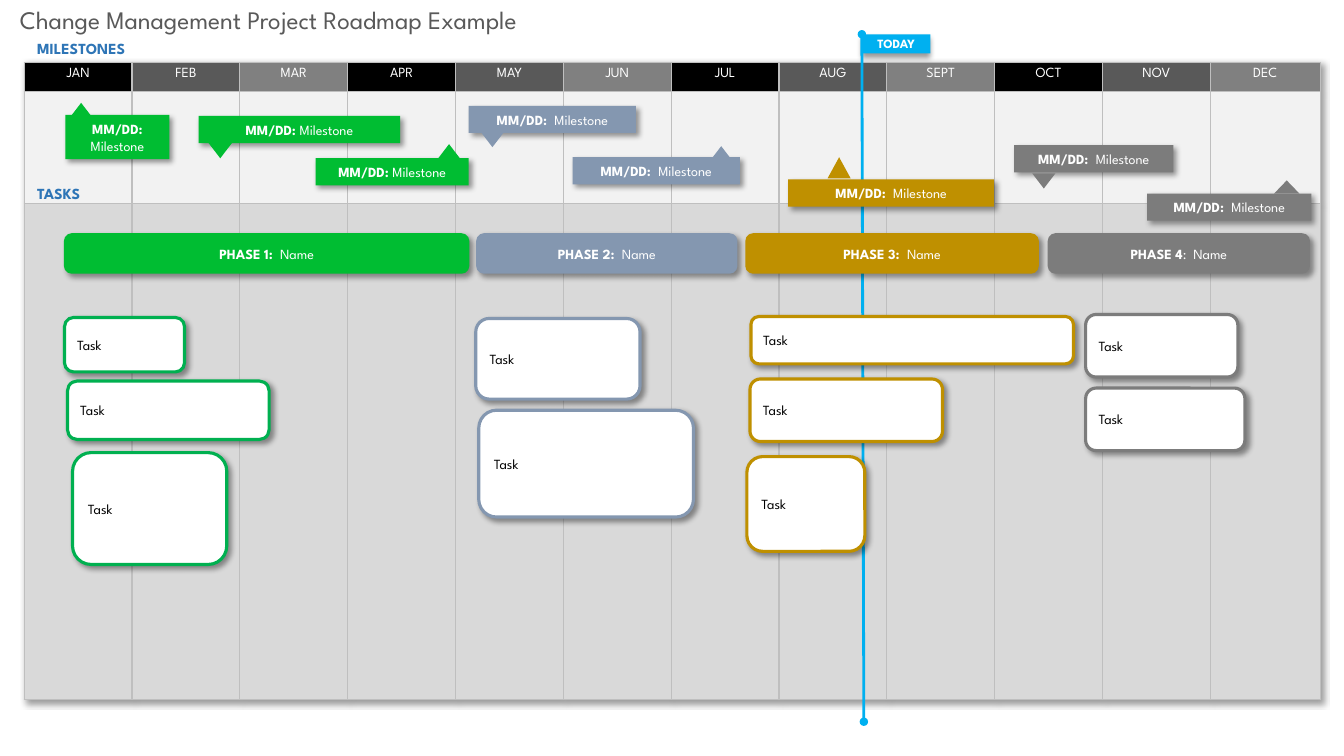
from dataclasses import dataclass
from typing import Any, NamedTuple

from lxml.etree import SubElement
from pptx import Presentation
from pptx.dml.color import RGBColor
from pptx.enum.shapes import MSO_CONNECTOR, MSO_SHAPE
from pptx.enum.text import MSO_ANCHOR, PP_ALIGN
from pptx.oxml.ns import qn
from pptx.util import Inches, Length, Pt

FONT = "League Spartan"
WHITE = RGBColor(0xFF, 0xFF, 0xFF)
BLACK = RGBColor(0x00, 0x00, 0x00)
DARK_GREY = RGBColor(0x59, 0x59, 0x59)
MID_GREY = RGBColor(0x80, 0x80, 0x80)
PALE_GREY = RGBColor(0xF2, 0xF2, 0xF2)
LIGHT_GREY = RGBColor(0xD9, 0xD9, 0xD9)
BORDER_GREY = RGBColor(0xBF, 0xBF, 0xBF)
GREEN = RGBColor(0x00, 0xBD, 0x32)
TASK_GREEN = RGBColor(0x00, 0xB0, 0x50)
SLATE = RGBColor(0x84, 0x97, 0xB0)
GOLD = RGBColor(0xBF, 0x90, 0x00)
GREY = RGBColor(0x7C, 0x7C, 0x7C)
SKY = RGBColor(0x00, 0xB0, 0xF0)
HEADING_BLUE = RGBColor(0x2E, 0x75, 0xB6)

SLIDE_COLUMNS, SLIDE_ROWS = 133.33, 75
GRID_STEP = 0.1
MONTHS = "JAN FEB MAR APR MAY JUN JUL AUG SEPT OCT NOV DEC".split()
MONTH_COLOURS = (BLACK, DARK_GREY, MID_GREY)
MONTH_COLUMNS, LAST_MONTH_COLUMNS = 10.7, 10.9
BAND_ROWS = (2.9, 11.1, 49.2)


class Run(NamedTuple):
    text: str
    bold: bool = False


class Area(NamedTuple):
    column: float
    row: float
    columns: float
    rows: float


Lines = tuple[tuple[Run, ...], ...]


@dataclass(frozen=True)
class Milestone:
    label: Area
    pointer: Area
    colour: RGBColor
    lines: Lines
    points_down: bool = False


@dataclass(frozen=True)
class Phase:
    bar: Area
    colour: RGBColor
    task_colour: RGBColor
    runs: tuple[Run, ...]
    tasks: tuple[Area, ...]


TIGHT = ((Run("MM/DD: ", True), Run("Milestone")),)
WIDE = ((Run("MM/DD:  ", True), Run("Milestone")),)
STACKED = ((Run("MM/DD:", True),), (Run("Milestone"),))

MILESTONES = (
    Milestone(Area(31.3, 15.7, 15.2, 2.7), Area(43.4, 14.3, 2.3, 1.5), GREEN, TIGHT),
    Milestone(Area(6.5, 11.4, 10.3, 4.4), Area(6.9, 10.2, 2.3, 1.5), GREEN, STACKED),
    Milestone(Area(19.7, 11.5, 20, 2.7), Area(20.7, 14.2, 2.3, 1.5), GREEN, TIGHT, True),
    Milestone(Area(46.5, 10.5, 16.6, 2.7), Area(47.7, 13.1, 2.3, 1.5), SLATE, WIDE, True),
    Milestone(Area(56.8, 15.6, 16.6, 2.7), Area(70.4, 14.5, 2.3, 1.5), SLATE, WIDE),
    Milestone(Area(78.2, 17.8, 20.4, 2.7), Area(82.1, 15.6, 2.3, 2.1), GOLD, WIDE),
    Milestone(Area(100.6, 14.4, 15.8, 2.7), Area(102.4, 17.2, 2.3, 1.5), GREY, WIDE, True),
    Milestone(Area(113.8, 19.2, 16.3, 2.7), Area(126.4, 17.9, 2.5, 1.3), GREY, WIDE),
)

PHASES = (
    Phase(Area(6.5, 23.3, 39.9, 3.7), GREEN, TASK_GREEN,
          (Run("PHASE 1:  ", True), Run("Name")),
          (Area(6.4, 31.5, 11.9, 5.4), Area(6.7, 37.8, 20, 5.8), Area(7.2, 44.9, 15.3, 11.1))),
    Phase(Area(47.4, 23.3, 25.6, 3.7), SLATE, SLATE,
          (Run("PHASE 2:  ", True), Run("Name")),
          (Area(47.2, 31.6, 16.3, 8), Area(47.5, 40.7, 21.3, 10.6))),
    Phase(Area(74.1, 23.3, 28.8, 3.7), GOLD, GOLD,
          (Run("PHASE 3:  ", True), Run("Name")),
          (Area(74.5, 31.4, 32, 4.7), Area(74.4, 37.6, 19.1, 6.2), Area(74.1, 45.3, 11.7, 9.4))),
    Phase(Area(104.1, 23.3, 25.7, 3.7), GREY, GREY,
          (Run("PHASE 4", True), Run(":  Name")),
          (Area(107.7, 31.2, 15.1, 6.2), Area(107.7, 38.5, 15.8, 6.2))),
)


def grid(steps: float) -> Length:
    return Inches(steps * GRID_STEP)


def place(area: Area) -> list[Length]:
    return [grid(steps) for steps in area]


def write(frame: Any, lines: Lines, size: float, colour: RGBColor, align: PP_ALIGN) -> None:
    frame.word_wrap = True
    for index, line in enumerate(lines):
        paragraph = frame.add_paragraph() if index else frame.paragraphs[0]
        paragraph.alignment = align
        for text, bold in line:
            run = paragraph.add_run()
            run.text = text
            run.font.name = FONT
            run.font.size = Pt(size)
            run.font.bold = bold
            run.font.color.rgb = colour


def add_shadow(effects: Any, degrees: int) -> None:
    shadow = SubElement(effects, qn("a:outerShdw"), blurRad=str(Pt(4)), dist=str(Pt(3)),
                        dir=str(degrees * 60000), algn="tl", rotWithShape="0")
    colour = SubElement(shadow, qn("a:srgbClr"), val=str(BLACK))
    SubElement(colour, qn("a:alpha"), val="40000")


def add_block(shapes: Any, kind: MSO_SHAPE, area: Area, fill: RGBColor,
              outline: RGBColor | None = None, shadow_angle: int | None = 45) -> Any:
    shape = shapes.add_shape(kind, *place(area))
    shape.fill.solid()
    shape.fill.fore_color.rgb = fill
    if outline is None:
        shape.line.fill.background()
    else:
        shape.line.color.rgb = outline
        shape.line.width = Pt(2.25)
    shape.shadow.inherit = False
    if shadow_angle is not None:
        add_shadow(shape.element.spPr.find(qn("a:effectLst")), shadow_angle)
    shape.text_frame.vertical_anchor = MSO_ANCHOR.MIDDLE
    return shape


def add_text(shapes: Any, area: Area, run: Run, size: float, colour: RGBColor) -> None:
    write(shapes.add_textbox(*place(area)).text_frame, ((run,),), size, colour, PP_ALIGN.LEFT)


def style_cell(cell: Any, fill: RGBColor) -> None:
    properties = cell._tc.get_or_add_tcPr()
    for side in ("a:lnL", "a:lnR", "a:lnT", "a:lnB"):
        border = SubElement(properties, qn(side), w=str(Pt(1)))
        SubElement(SubElement(border, qn("a:solidFill")), qn("a:srgbClr"), val=str(BORDER_GREY))
    cell.fill.solid()
    cell.fill.fore_color.rgb = fill


def add_calendar(shapes: Any) -> None:
    widths = [MONTH_COLUMNS] * (len(MONTHS) - 1) + [LAST_MONTH_COLUMNS]
    area = Area(2.4, 6.2, sum(widths), sum(BAND_ROWS))
    table = shapes.add_table(len(BAND_ROWS), len(MONTHS), *place(area)).table
    table.first_row = table.horz_banding = False
    effects = SubElement(table._tbl.tblPr, qn("a:effectLst"))
    table._tbl.tblPr.insert(0, effects)
    add_shadow(effects, 45)
    for row, height in zip(table.rows, BAND_ROWS):
        row.height = grid(height)
    for index, month in enumerate(MONTHS):
        table.columns[index].width = grid(widths[index])
        fills = (MONTH_COLOURS[index % len(MONTH_COLOURS)], PALE_GREY, LIGHT_GREY)
        for row_index, fill in enumerate(fills):
            style_cell(table.cell(row_index, index), fill)
        write(table.cell(0, index).text_frame, ((Run(month),),), 10, WHITE, PP_ALIGN.CENTER)


def add_today(shapes: Any) -> None:
    flag = add_block(shapes, MSO_SHAPE.SNIP_1_RECTANGLE, Area(85.5, 3.4, 6.8, 1.9), SKY, None, 90)
    flag.adjustments[0] = 0
    write(flag.text_frame, ((Run("TODAY", True),),), 9, WHITE, PP_ALIGN.CENTER)
    ends = [grid(steps) for steps in (85.5, 3.4, 85.7, 71.6)]
    marker = shapes.add_connector(MSO_CONNECTOR.STRAIGHT, *ends)
    marker.line.color.rgb = SKY
    marker.line.width = Pt(2)
    for end in ("a:headEnd", "a:tailEnd"):
        SubElement(marker.line._get_or_add_ln(), qn(end), type="oval")
    SubElement(marker.element.spPr, qn("a:effectLst"))


def add_milestone(shapes: Any, milestone: Milestone) -> None:
    label = add_block(shapes, MSO_SHAPE.RECTANGLE, milestone.label, milestone.colour)
    frame = label.text_frame
    frame.margin_left = frame.margin_right = frame.margin_top = frame.margin_bottom = grid(0.5)
    write(frame, milestone.lines, 10, WHITE, PP_ALIGN.CENTER)
    pointer = add_block(shapes, MSO_SHAPE.ISOSCELES_TRIANGLE, milestone.pointer,
                        milestone.colour, None, None)
    pointer.rotation = 180 if milestone.points_down else 0


def add_phase(shapes: Any, phase: Phase) -> None:
    kind = MSO_SHAPE.ROUNDED_RECTANGLE
    bar = add_block(shapes, kind, phase.bar, phase.colour, phase.colour)
    write(bar.text_frame, (phase.runs,), 10, WHITE, PP_ALIGN.CENTER)
    for area in phase.tasks:
        task = add_block(shapes, kind, area, WHITE, phase.task_colour)
        write(task.text_frame, ((Run("Task"),),), 10, BLACK, PP_ALIGN.LEFT)


def main() -> None:
    presentation = Presentation()
    presentation.slide_width = grid(SLIDE_COLUMNS)
    presentation.slide_height = grid(SLIDE_ROWS)
    shapes = presentation.slides.add_slide(presentation.slide_layouts[6]).shapes
    add_calendar(shapes)
    add_today(shapes.add_group_shape().shapes)
    for phase in PHASES:
        add_phase(shapes, phase)
    add_text(shapes, Area(2.7, 3.4, 13.3, 2.9), Run("MILESTONES", True), 11, HEADING_BLUE)
    add_text(shapes, Area(2.7, 17.8, 13.3, 2.9), Run("TASKS", True), 11, HEADING_BLUE)
    for milestone in MILESTONES:
        add_milestone(shapes.add_group_shape().shapes, milestone)
    title = Run("Change Management Project Roadmap Example")
    add_text(shapes, Area(1, -0.1, 92.6, 4), title, 18, DARK_GREY)
    presentation.save("out.pptx")


if __name__ == "__main__":
    main()
